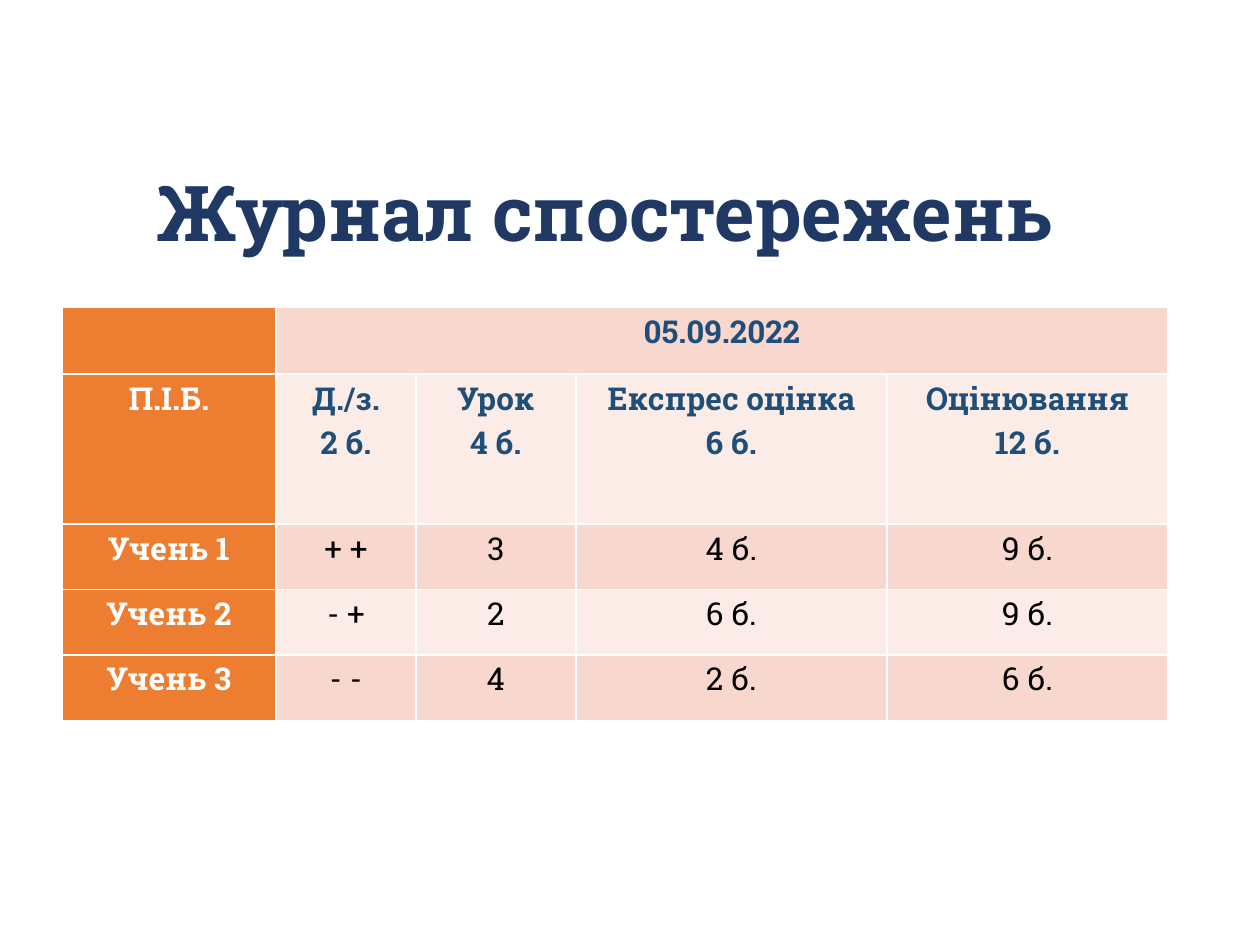
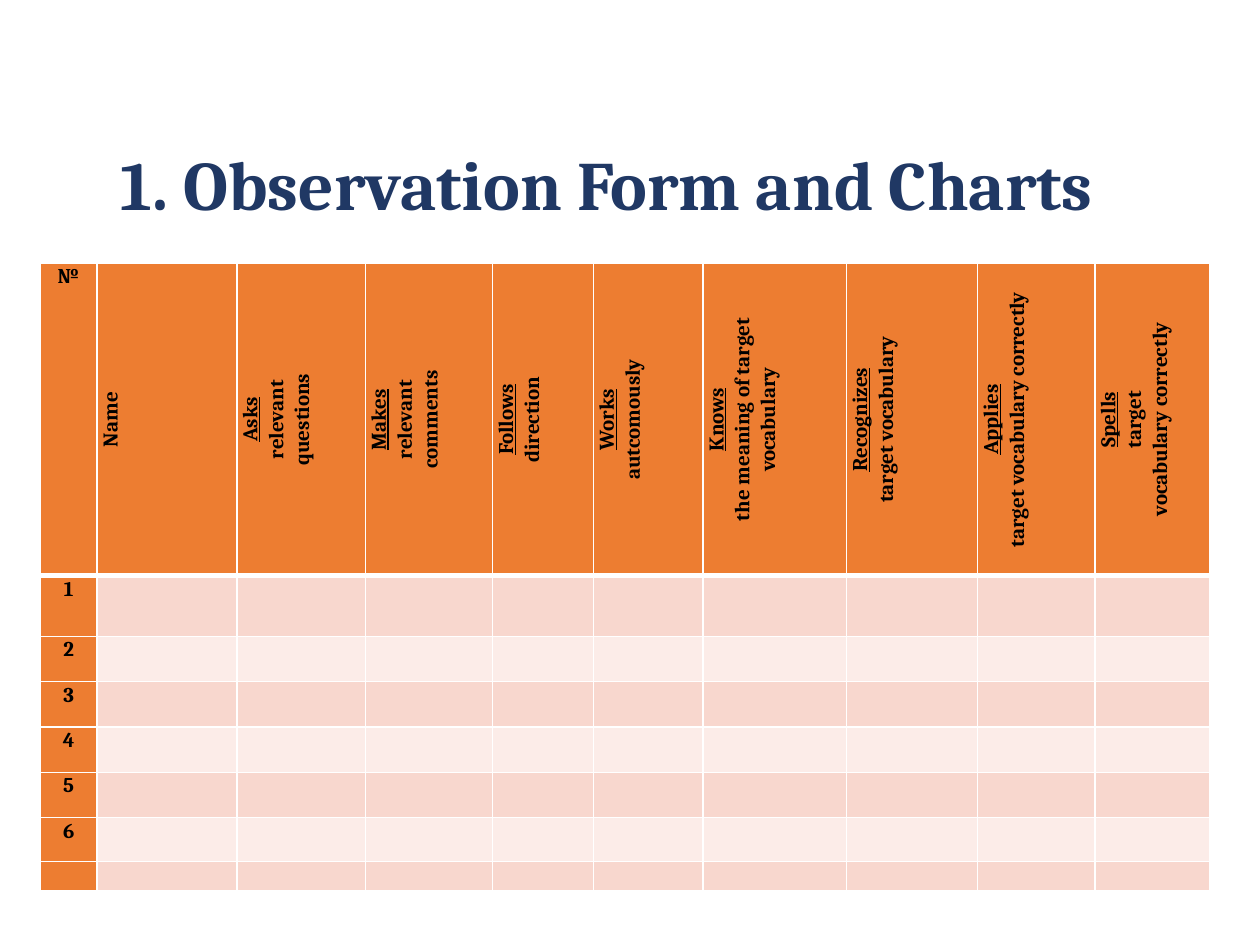
from dataclasses import dataclass

from lxml import etree
from pptx import Presentation
from pptx.dml.color import RGBColor
from pptx.enum.text import MSO_ANCHOR, PP_ALIGN
from pptx.oxml.ns import qn
from pptx.util import Emu, Inches, Pt

CENTER, LEFT = PP_ALIGN.CENTER, PP_ALIGN.LEFT
MIDDLE = MSO_ANCHOR.MIDDLE
TITLE_ONLY = 5
SLIDE_WIDTH, SLIDE_HEIGHT = Inches(10), Inches(7.5)
GRID_COLUMNS = 100


@dataclass(frozen=True)
class Theme:
    title: str = "203864"
    heading: str = "1F4E79"
    accent: str = "ED7D31"
    band_dark: str = "F8D7CE"
    band_light: str = "FCECE8"
    white: str = "FFFFFF"
    black: str = "000000"
    slab: str = "Roboto Slab"
    serif: str = "Cambria"
    title_size: float = 44
    long_title_size: float = 39.6
    journal_size: float = 18
    form_size: float = 12
    title_spacing: float = 0.9
    cell_spacing: float = 1.07
    border: float = 1
    header_border: float = 3


THEME = Theme()


@dataclass(frozen=True)
class TextStyle:
    font: str
    size: float
    color: str
    bold: bool = True


@dataclass(frozen=True)
class CellStyle:
    text: TextStyle
    fill: str
    padding: float
    vertical: bool = False
    bottom_border: float = THEME.border


@dataclass(frozen=True)
class TitleSpec:
    text: str
    left: float
    top: float
    style: TextStyle
    bottom_padding: float = 0.5


@dataclass(frozen=True)
class TableSpec:
    left: float
    top: float
    columns: tuple[float, ...]
    rows: tuple[float, ...]


def units(count: float) -> Emu:
    return Emu(round(SLIDE_WIDTH * count / GRID_COLUMNS))


def add_span(para, text: str, style: TextStyle, underline: bool = False) -> None:
    span = para.add_run()
    span.text = text
    font = span.font
    font.name, font.size, font.bold = style.font, Pt(style.size), style.bold
    font.color.rgb = RGBColor.from_string(style.color)
    if underline:
        font.underline = True


def add_page(deck, title: TitleSpec):
    page = deck.slides.add_slide(deck.slide_layouts[TITLE_ONLY])
    box = page.shapes.title
    box.left, box.top = units(title.left), units(title.top)
    box.width, box.height = units(86.2), units(14.5)
    frame = box.text_frame
    frame.word_wrap = True
    frame.vertical_anchor = MIDDLE
    frame.margin_bottom = units(title.bottom_padding)
    para = frame.paragraphs[0]
    para.alignment, para.line_spacing = LEFT, THEME.title_spacing
    add_span(para, title.text, title.style)
    return page


def add_grid(page, layout: TableSpec):
    shape = page.shapes.add_table(
        len(layout.rows), len(layout.columns), units(layout.left), units(layout.top),
        units(sum(layout.columns)), units(sum(layout.rows)))
    table = shape.table
    table.first_row = table.horz_banding = False
    for column, width in zip(table.columns, layout.columns):
        column.width = units(width)
    for row, height in zip(table.rows, layout.rows):
        row.height = units(height)
    return table


def add_border(properties, side: str, width: float) -> None:
    line = etree.SubElement(properties, qn(f"a:{side}"), w=str(Pt(width)))
    fill = etree.SubElement(line, qn("a:solidFill"))
    etree.SubElement(fill, qn("a:srgbClr"), val=THEME.white)


def fill_cell(cell, lines: tuple[str, ...], style: CellStyle) -> None:
    cell.margin_left = cell.margin_right = units(style.padding)
    cell.margin_top = cell.margin_bottom = 0
    properties = cell._tc.get_or_add_tcPr()
    if style.vertical:
        properties.set("vert", "vert270")
    for side in ("lnL", "lnR", "lnT"):
        add_border(properties, side, THEME.border)
    add_border(properties, "lnB", style.bottom_border)
    cell.fill.solid()
    cell.fill.fore_color.rgb = RGBColor.from_string(style.fill)
    frame = cell.text_frame
    if not lines:
        size = str(round(style.text.size * 100))
        etree.SubElement(frame.paragraphs[0]._p, qn("a:endParaRPr"), sz=size)
    for index, text in enumerate(lines):
        para = frame.add_paragraph() if index else frame.paragraphs[0]
        para.alignment, para.line_spacing = CENTER, THEME.cell_spacing
        add_span(para, text, style.text, style.vertical and index == 0 and len(lines) > 1)


def band(row: int) -> str:
    return THEME.band_light if row % 2 else THEME.band_dark


def build_journal(deck) -> None:
    page = add_page(deck, TitleSpec(
        "Журнал спостережень", 11.4, 9.9,
        TextStyle(THEME.slab, THEME.title_size, THEME.title)))
    table = add_grid(page, TableSpec(
        4.9, 24.4, (17, 11.1, 12.7, 24.7, 22.3), (5.3, 11.9, 5.2, 5.2, 5.2)))
    entries = (
        ("", "05.09.2022", "", "", ""),
        ("П.І.Б.", "Д./з.\n2 б.", "Урок\n4 б.", "Експрес оцінка\n6 б.", "Оцінювання\n12 б."),
        ("Учень 1", "+ +", "3", "4 б.", "9 б."),
        ("Учень 2", "- +", "2", "6 б.", "9 б."),
        ("Учень 3", "- -", "4", "2 б.", "6 б."),
    )
    name = TextStyle(THEME.slab, THEME.journal_size, THEME.white)
    heading = TextStyle(THEME.slab, THEME.journal_size, THEME.heading)
    mark = TextStyle(THEME.slab, THEME.journal_size, THEME.black, False)
    table.cell(0, 1).merge(table.cell(0, 4))
    for row, texts in enumerate(entries):
        for column, text in enumerate(texts):
            if column == 0:
                style = CellStyle(name, THEME.accent, 0.7)
            else:
                style = CellStyle(heading if row < 2 else mark, band(row), 0.7)
            fill_cell(table.cell(row, column), tuple(text.splitlines()), style)


def build_observation_form(deck) -> None:
    page = add_page(deck, TitleSpec(
        "1. Observation Form and Charts", 8.6, 11,
        TextStyle(THEME.serif, THEME.long_title_size, THEME.title), 7.2))
    table = add_grid(page, TableSpec(
        3.2, 20.9, (4.5, 11.1, 10.2, 10.1, 8, 8.7, 11.4, 10.4, 9.3, 9.1),
        (16.8, 4.8, 3.6, 3.6, 3.6, 3.6, 3.5, 2.3)))
    headings = (
        ("№",), ("Name",),
        ("Asks", "relevant", "questions"),
        ("Makes", "relevant", "comments"),
        ("Follows", "direction"),
        ("Works", "autcomously"),
        ("Knows", "the meaning of target vocabulary"),
        ("Recognizes", "target vocabulary"),
        ("Applies", "target vocabulary correctly"),
        ("Spells", "target", "vocabulary correctly"),
    )
    label = TextStyle(THEME.serif, THEME.form_size, THEME.black)
    for column, lines in enumerate(headings):
        fill_cell(table.cell(0, column), lines, CellStyle(
            label, THEME.accent, 0.6, column > 0, THEME.header_border))
    numbers = [(str(number),) for number in range(1, 7)] + [()]
    for row, number in enumerate(numbers, 1):
        fill_cell(table.cell(row, 0), number, CellStyle(label, THEME.accent, 0.6))
        for column in range(1, len(headings)):
            fill_cell(table.cell(row, column), (), CellStyle(label, band(row - 1), 0.6))


def main() -> None:
    deck = Presentation()
    deck.slide_width, deck.slide_height = SLIDE_WIDTH, SLIDE_HEIGHT
    build_journal(deck)
    build_observation_form(deck)
    deck.save("out.pptx")


if __name__ == "__main__":
    main()
